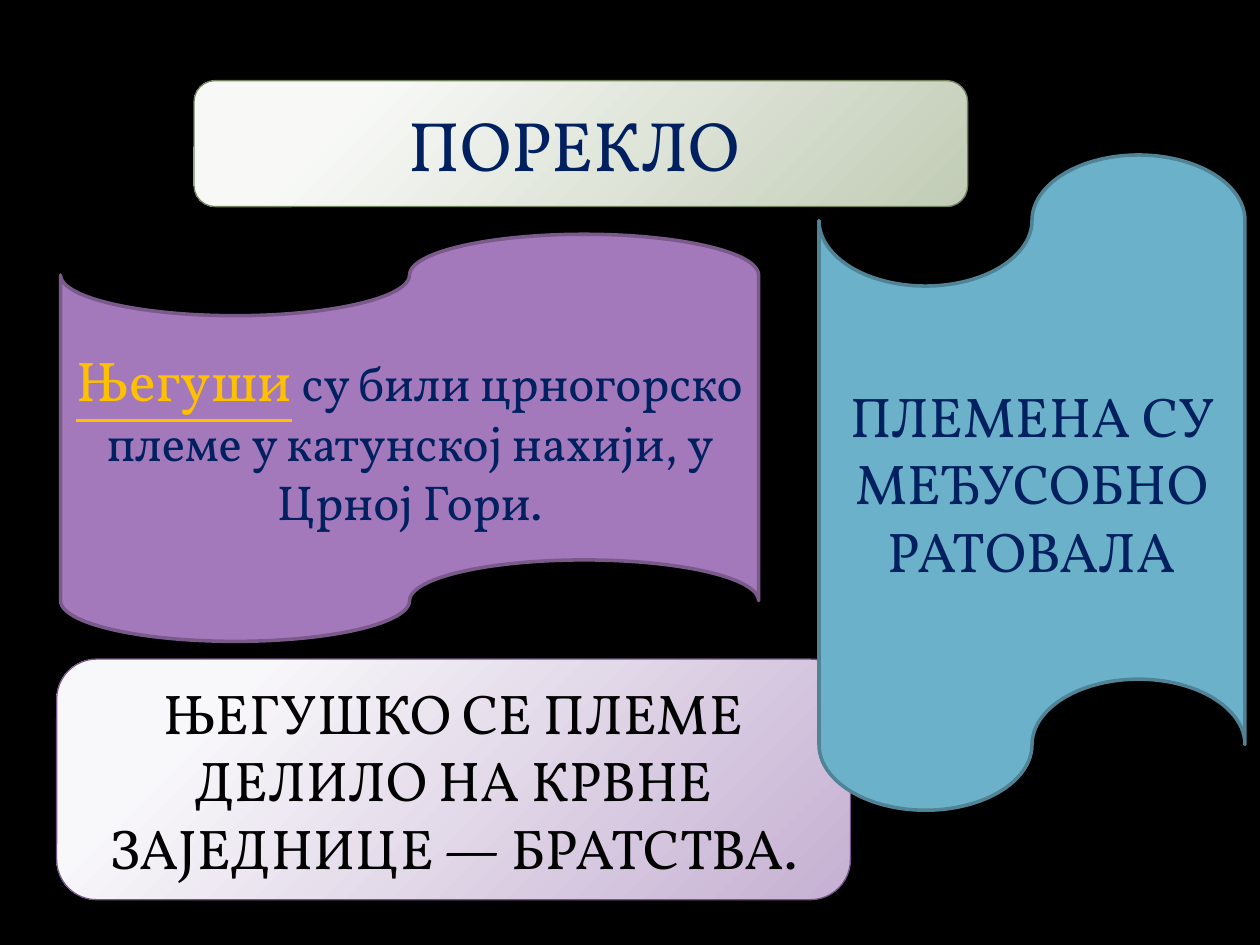
from lxml import etree
from pptx import Presentation
from pptx.dml.color import RGBColor
from pptx.enum import shapes, text
from pptx.oxml import ns
from pptx.util import Pt

FONT = "Vollkorn"
NAVY, GOLD, BLACK = "002060", "FFC000", "000000"


def rgb(code):
    return RGBColor.from_string(code)


class Deck:
    def __init__(self, wide, high):
        self.prs = Presentation()
        self.prs.slide_width, self.prs.slide_height = Pt(wide), Pt(high)
        self.slide = self.prs.slides.add_slide(self.prs.slide_layouts[5])

    def ground(self, color):
        fill = self.slide.background.fill
        fill.solid()
        fill.fore_color.rgb = rgb(color)

    def shape(self, kind, box, line, width):
        item = self.slide.shapes.add_shape(kind, *map(Pt, box))
        item.shadow.inherit = False
        item.line.color.rgb = rgb(line)
        item.line.width = Pt(width)
        return item

    def plate(self, box, light, dark, line):
        """Rounded box whose glow spreads from the top left corner."""
        item = self.shape(shapes.MSO_SHAPE.ROUNDED_RECTANGLE, box, line, 0.75)
        item.fill.gradient()
        for stop, place, color in zip(item.fill.gradient_stops, (0.2, 1), (light, dark)):
            stop.position = place
            stop.color.rgb = rgb(color)
        grad = item._element.spPr.find(ns.qn("a:gradFill"))
        grad.remove(grad.find(ns.qn("a:lin")))
        glow = etree.SubElement(grad, ns.qn("a:path"), path="circle")
        etree.SubElement(glow, ns.qn("a:fillToRect"),
                         l="-15000", t="-15000", r="115000", b="115000")
        return item

    def tape(self, box, fill, line):
        item = self.shape(shapes.MSO_SHAPE.FLOWCHART_PUNCHED_TAPE, box, line, 2)
        item.fill.solid()
        item.fill.fore_color.rgb = rgb(fill)
        return item

    def title(self, box, plate, *runs):
        """Set the title right above its plate."""
        item = self.slide.shapes.title
        item.left, item.top, item.width, item.height = map(Pt, box)
        plate._element.addnext(item._element)
        self.label(item, *runs)

    def label(self, item, *runs):
        """Each run is (words, size, color, underlined)."""
        frame = item.text_frame
        frame.word_wrap = True
        frame.auto_size = text.MSO_AUTO_SIZE.NONE
        frame.vertical_anchor = text.MSO_ANCHOR.MIDDLE
        para = frame.paragraphs[0]
        para.alignment = text.PP_ALIGN.CENTER
        for words, size, color, under in runs:
            run = para.add_run()
            run.text = words
            font = run.font
            font.name, font.size, font.underline = FONT, Pt(size), under
            font.color.rgb = rgb(color)


def main():
    deck = Deck(720, 540)
    deck.ground(BLACK)

    # Title on its plate
    head = (110.9, 46.1, 442.1, 72)
    plate = deck.plate(head, "F8F9F7", "C1CCB5", "72825E")
    deck.title(head, plate, ("ПОРЕКЛО ", 40, NAVY, False))

    # Who the tribe were
    tribe = deck.tape((34.6, 133.9, 398.9, 232.6), "A379BB", "795A8A")
    deck.label(tribe, ("Његуши", 32, GOLD, True),
               (" су били црногорско племе у катунској нахији, у Црној Гори.",
                28, NAVY, False))

    # How the tribe was divided
    kin = deck.plate((32.4, 376.6, 453.6, 137.5), "F8F7FA", "C5B0D2", "77568A")
    deck.label(kin, ("ЊЕГУШКО СЕ ПЛЕМЕ ДЕЛИЛО НА КРВНЕ ЗАЈЕДНИЦЕ — БРАТСТВА.",
                     32, BLACK, False))

    # Wars between tribes
    wars = deck.tape((468, 88.6, 243.4, 374.4), "6BB1C9", "4F8395")
    deck.label(wars, ("ПЛЕМЕНА СУ МЕЂУСОБНО РАТОВАЛА", 32, NAVY, False))

    deck.prs.save("out.pptx")


if __name__ == "__main__":
    main()
